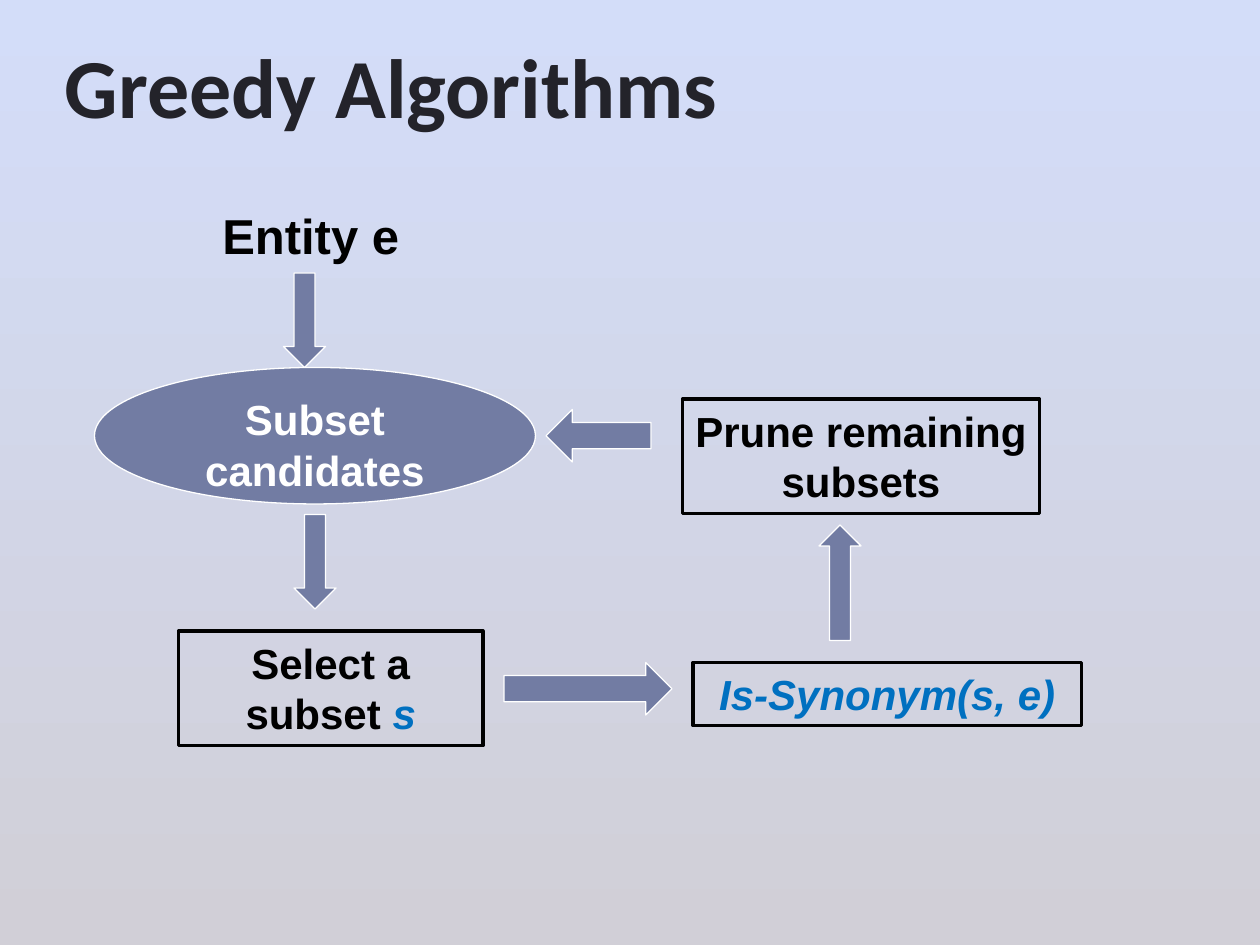
from dataclasses import dataclass
from typing import NamedTuple

from pptx import Presentation
from pptx.dml.color import RGBColor
from pptx.enum.shapes import MSO_SHAPE
from pptx.enum.text import MSO_ANCHOR, PP_ALIGN
from pptx.util import Inches, Pt

BOX, OVAL = MSO_SHAPE.RECTANGLE, MSO_SHAPE.OVAL
DOWN, UP = MSO_SHAPE.DOWN_ARROW, MSO_SHAPE.UP_ARROW
LEFT, RIGHT = MSO_SHAPE.LEFT_ARROW, MSO_SHAPE.RIGHT_ARROW
MIDDLE, TOP = MSO_ANCHOR.MIDDLE, MSO_ANCHOR.TOP
START, CENTER = PP_ALIGN.LEFT, PP_ALIGN.CENTER

WIDTH, HEIGHT = Inches(10), Inches(7.5)
COLS, ROWS = 120, 90


@dataclass(frozen=True)
class Theme:
    sky: str = "D3DDF9"
    haze: str = "D1CFD7"
    slate: str = "727CA3"
    white: str = "FFFFFF"
    black: str = "000000"
    ink: str = "23232A"
    blue: str = "0070C0"
    head: str = "Calibri"
    body: str = "Arial"
    title: int = 48
    entry: int = 28
    step: int = 24
    thin: float = 0.75
    thick: float = 2


class Area(NamedTuple):
    """A place on the grid, in columns and rows."""
    col: float
    row: float
    wide: float
    high: float


class Run(NamedTuple):
    text: str
    color: str
    size: int
    font: str
    italic: bool = False


class Label(NamedTuple):
    area: Area
    run: Run
    anchor: MSO_ANCHOR
    leading: float


class Node(NamedTuple):
    kind: MSO_SHAPE
    area: Area
    runs: tuple[Run, ...] = ()


THEME = Theme()


def step(text: str, color: str, italic: bool = False) -> Run:
    """Make a run in the style of the flow's steps."""
    return Run(text, color, THEME.step, THEME.body, italic)


LABELS = (
    Label(Area(5, 4, 108, 10),
          Run("Greedy Algorithms", THEME.ink, THEME.title, THEME.head),
          MIDDLE, 0.8),
    Label(Area(20, 19, 21, 6.8),
          Run("Entity e", THEME.black, THEME.entry, THEME.body), TOP, 1.0),
)

NODES = (
    Node(DOWN, Area(27, 26, 4, 9)),
    Node(OVAL, Area(9, 35, 42, 13), (step("Subset candidates", THEME.white),)),
    Node(DOWN, Area(28, 49, 4, 9)),
    Node(BOX, Area(17, 60.1, 29, 10.9),
         (step("Select a subset ", THEME.black), step("s", THEME.blue, True))),
    Node(RIGHT, Area(48, 63.1, 16, 5)),
    Node(BOX, Area(66, 63.1, 37, 6),
         (step("Is-Synonym(s, e)", THEME.blue, True),)),
    Node(UP, Area(78, 50, 4, 11)),
    Node(BOX, Area(65, 38, 34, 10.9),
         (step("Prune remaining subsets", THEME.black),)),
    Node(LEFT, Area(52, 39, 10, 5)),
)


def rgb(code: str) -> RGBColor:
    return RGBColor.from_string(code)


def place(area: Area) -> tuple[int, int, int, int]:
    """Turn grid units into left, top, width and height."""
    return (round(area.col * WIDTH / COLS), round(area.row * HEIGHT / ROWS),
            round(area.wide * WIDTH / COLS), round(area.high * HEIGHT / ROWS))


def write(shape, runs: tuple[Run, ...], align: PP_ALIGN,
          anchor: MSO_ANCHOR = TOP, leading: float = 1.0) -> None:
    frame = shape.text_frame
    frame.word_wrap = True
    frame.vertical_anchor = anchor
    para = frame.paragraphs[0]
    para.alignment = align
    para.line_spacing = leading
    for item in runs:
        run = para.add_run()
        run.text = item.text
        font = run.font
        font.name, font.size = item.font, Pt(item.size)
        font.bold, font.italic = True, item.italic
        font.color.rgb = rgb(item.color)


def draw_node(slide, node: Node) -> None:
    shape = slide.shapes.add_shape(node.kind, *place(node.area))
    shape.shadow.inherit = False
    if node.kind == BOX:
        shape.fill.background()
        line, width = THEME.black, THEME.thick
    else:
        shape.fill.solid()
        shape.fill.fore_color.rgb = rgb(THEME.slate)
        line, width = THEME.white, THEME.thin
    shape.line.color.rgb = rgb(line)
    shape.line.width = Pt(width)
    if node.runs:
        write(shape, node.runs, CENTER)


def draw_label(slide, label: Label) -> None:
    box = slide.shapes.add_textbox(*place(label.area))
    write(box, (label.run,), START, label.anchor, label.leading)


def paint(slide) -> None:
    """Fill the background from sky at the top to haze at the bottom."""
    fill = slide.background.fill
    fill.gradient()
    fill.gradient_angle = 270
    for stop, color in zip(fill.gradient_stops, (THEME.sky, THEME.haze)):
        stop.color.rgb = rgb(color)


def main() -> None:
    deck = Presentation()
    deck.slide_width, deck.slide_height = WIDTH, HEIGHT
    slide = deck.slides.add_slide(deck.slide_layouts[6])
    paint(slide)
    for label in LABELS:
        draw_label(slide, label)
    for node in NODES:
        draw_node(slide, node)
    deck.save("out.pptx")


if __name__ == "__main__":
    main()
